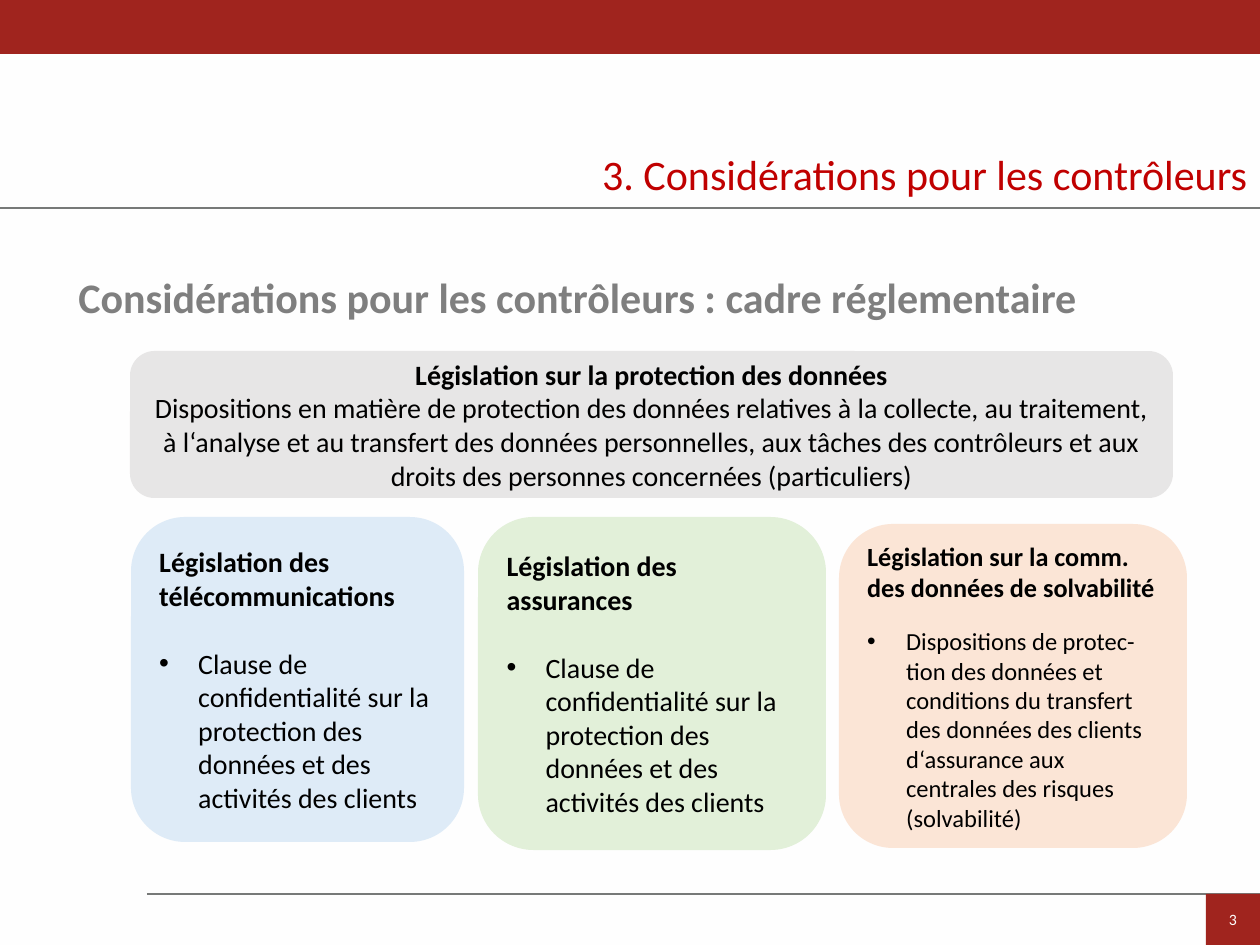
import pptx
import pptx.dml.color
import pptx.enum.shapes
import pptx.enum.text
import pptx.oxml
import pptx.oxml.ns
import pptx.util

PX = 914400 // 126  # EMU in one px
FONT = "Calibri"
COLORS = {
    "paper": "FEFEFE", "band": "A0241E", "rule": "777978",
    "title": "C00000", "heading": "7F7F7F", "text": "000000",
    "grey": "E7E6E6", "blue": "DEEBF7", "green": "E2F0D9", "orange": "FBE5D6",
}
ALIGN = pptx.enum.text.PP_ALIGN
ANCHOR = pptx.enum.text.MSO_ANCHOR
SHAPE = pptx.enum.shapes.MSO_SHAPE

CLAUSE = ("Clause de confidentialité sur la protection des données "
          "et des activités des clients")
# Frame, fill, heading and its size, gap, body and its size
CARDS = [
    ((131, 517, 333, 325), "blue", "Législation des télécommunications", 16,
     19.5, CLAUSE, 16),
    ((478, 517, 348, 333), "green", "Législation des assurances", 16,
     19.5, CLAUSE, 16),
    ((839, 524, 348, 324), "orange",
     "Législation sur la comm. des données de solvabilité", 15, 13.4,
     "Dispositions de protec-tion des données et conditions du transfert "
     "des données des clients d‘assurance aux centrales des risques "
     "(solvabilité)", 14),
]


def color(name):
    return pptx.dml.color.RGBColor.from_string(COLORS[name])


def scale(frame):
    return [length * PX for length in frame]


def add_text(para, text, size, color_name="text", bold=False, align=ALIGN.LEFT):
    para.alignment = align
    span = para.add_run()
    span.text = text
    span.font.name = FONT
    span.font.size = pptx.util.Pt(size)
    span.font.bold = bold
    span.font.color.rgb = color(color_name)


def add_bullet(para, indent):
    properties = para._p.get_or_add_pPr()
    properties.set("marL", str(indent * PX))
    properties.set("indent", str(-indent * PX))
    namespace = pptx.oxml.ns.nsdecls("a")
    for element in ('buFont typeface="Arial"', 'buChar char="•"'):
        properties.append(pptx.oxml.parse_xml(f"<a:{element} {namespace}/>"))


def add_block(page, kind, frame, fill):
    block = page.shapes.add_shape(kind, *scale(frame))
    block.shadow.inherit = False
    block.fill.solid()
    block.fill.fore_color.rgb = color(fill)
    block.line.fill.background()
    block.text_frame.word_wrap = True
    block.text_frame.vertical_anchor = ANCHOR.MIDDLE
    return block.text_frame


def add_rule(page, left, top):
    rule = page.shapes.add_connector(
        pptx.enum.shapes.MSO_CONNECTOR.STRAIGHT, *scale((left, top, 1260, top)))
    rule.line.color.rgb = color("rule")
    rule.line.width = pptx.util.Pt(1.25)
    rule._element.spPr.append(pptx.oxml.parse_xml(
        f"<a:effectLst {pptx.oxml.ns.nsdecls('a')}/>"))


def add_title(page, text):
    title = page.shapes.title
    title.left, title.top, title.width, title.height = scale((559, 142, 701, 63))
    title.text_frame.word_wrap = True
    title.text_frame.vertical_anchor = ANCHOR.TOP
    add_text(title.text_frame.paragraphs[0], text, 24, "title", align=ALIGN.RIGHT)


def add_heading(page, text):
    box = page.shapes.add_textbox(*scale((66, 265, 1172, 70)))
    box.text_frame.word_wrap = True
    add_text(box.text_frame.paragraphs[0], text, 24, "heading", bold=True)


def add_card(page, frame, fill, heading, heading_size, gap, body, body_size):
    card = add_block(page, SHAPE.ROUNDED_RECTANGLE, frame, fill)
    add_text(card.paragraphs[0], heading, heading_size, bold=True)
    para = card.add_paragraph()
    para.space_before = pptx.util.Pt(gap)
    add_bullet(para, 39)
    add_text(para, body, body_size)


def main():
    deck = pptx.Presentation()
    deck.slide_width, deck.slide_height = scale((1260, 945))
    page = deck.slides.add_slide(deck.slide_layouts[5])
    page.background.fill.solid()
    page.background.fill.fore_color.rgb = color("paper")

    # Page frame
    add_rule(page, 147, 894)
    add_rule(page, 0, 208)
    add_block(page, SHAPE.RECTANGLE, (0, 0, 1260, 54), "band")
    number = add_block(page, SHAPE.RECTANGLE, (1206, 894, 54, 51), "band")
    add_text(number.paragraphs[0], "3", 9, "paper", align=ALIGN.CENTER)

    # Title and heading
    add_title(page, "3. Considérations pour les contrôleurs")
    add_heading(page, "Considérations pour les contrôleurs : cadre réglementaire")

    # General law above the sector laws
    law = add_block(page, SHAPE.ROUNDED_RECTANGLE, (130, 351, 1043, 147), "grey")
    add_text(law.paragraphs[0], "Législation sur la protection des données",
             16, bold=True, align=ALIGN.CENTER)
    add_text(law.add_paragraph(),
             "Dispositions en matière de protection des données relatives à la "
             "collecte, au traitement, à l‘analyse et au transfert des données "
             "personnelles, aux tâches des contrôleurs et aux droits des "
             "personnes concernées (particuliers)", 16, align=ALIGN.CENTER)

    # Sector laws
    for card in CARDS:
        add_card(page, *card)

    deck.save("out.pptx")


if __name__ == "__main__":
    main()
